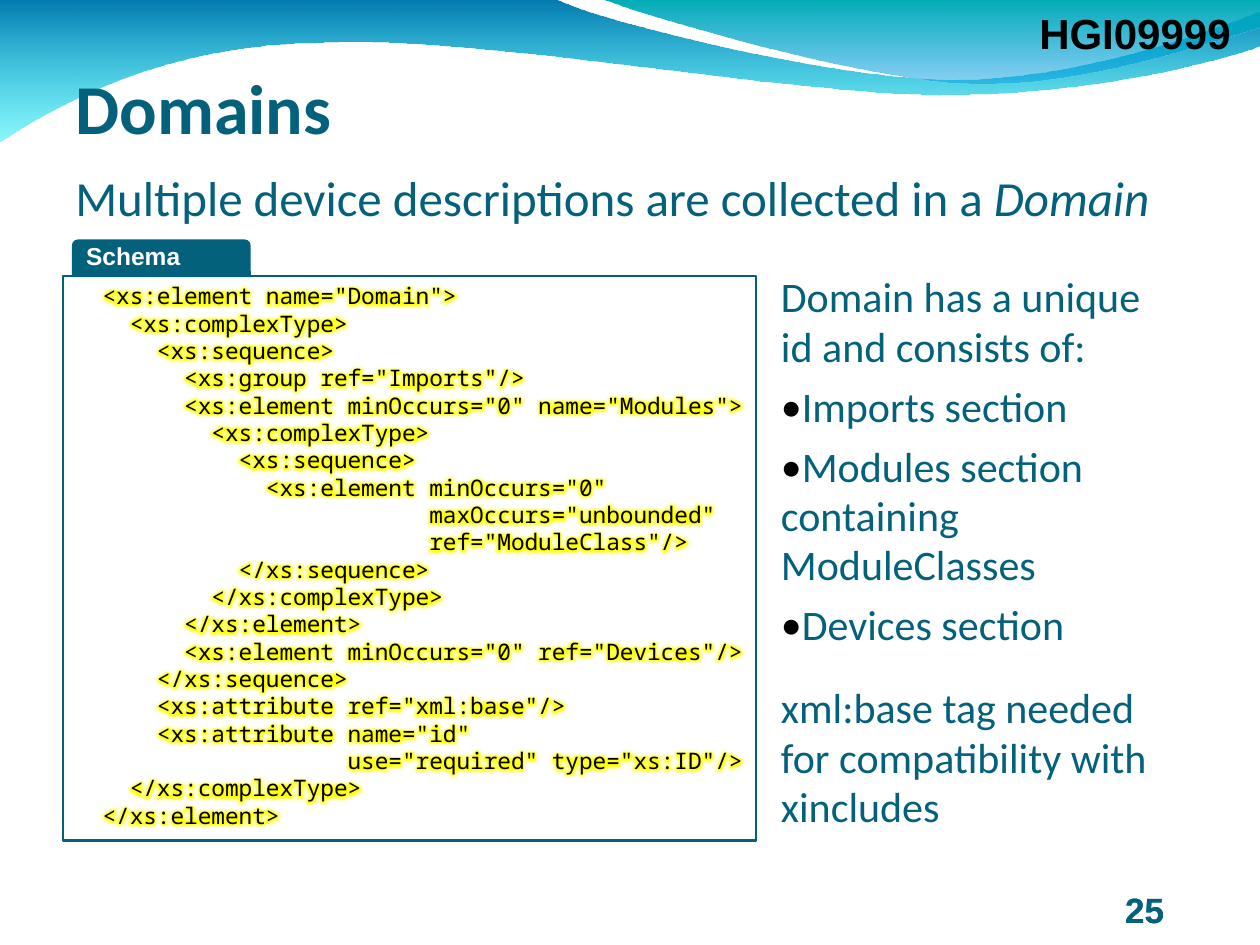
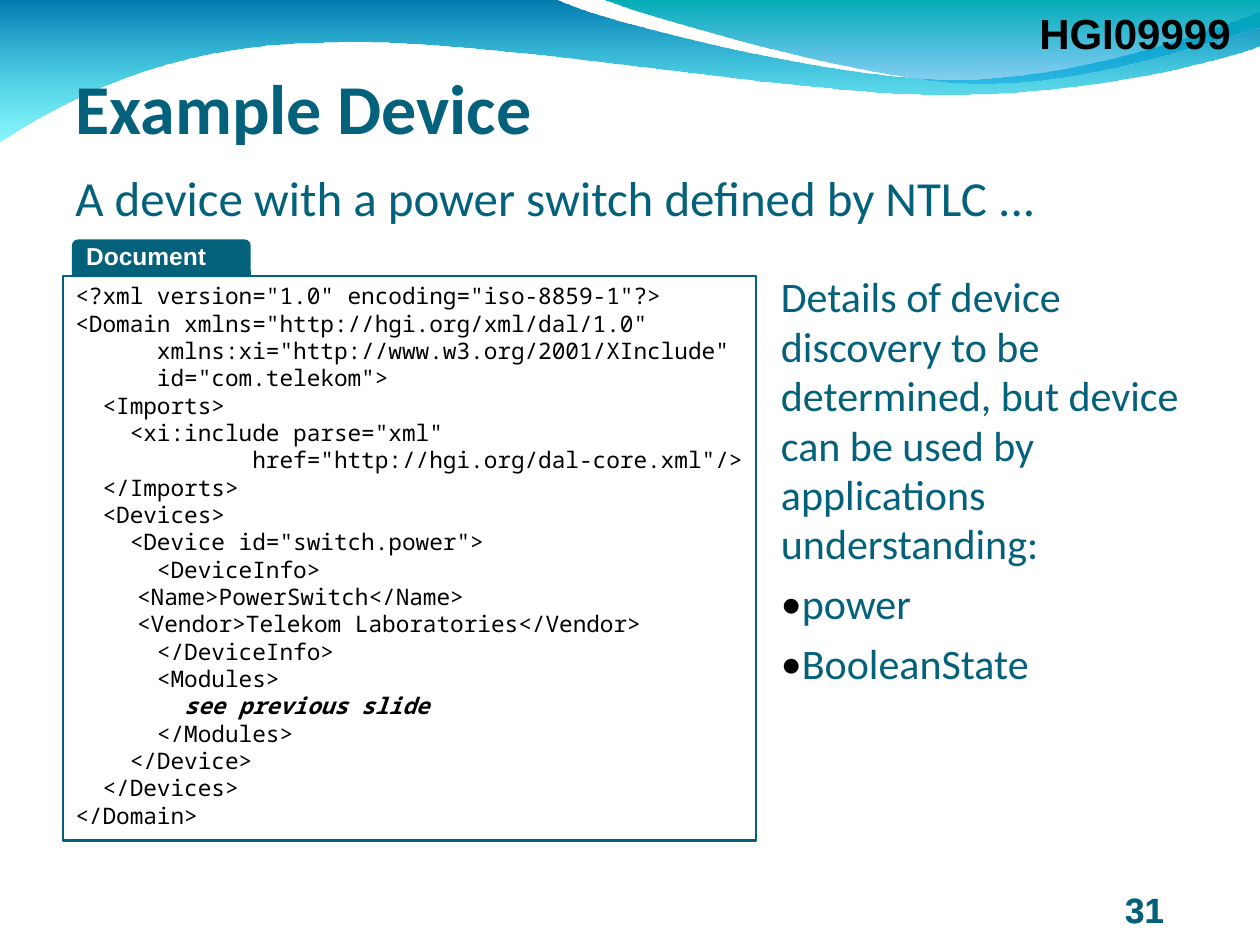
from lxml.etree import SubElement
from pptx import Presentation
from pptx.dml.color import RGBColor
from pptx.enum.shapes import MSO_SHAPE
from pptx.enum.text import MSO_ANCHOR, MSO_AUTO_SIZE, PP_ALIGN
from pptx.oxml import parse_xml
from pptx.oxml.ns import nsdecls, qn
from pptx.util import Pt

PX = 9144  # 100 px to the inch
TEAL, BLACK, WHITE, YELLOW = "04617B", "000000", "FFFFFF", "FFFF00"
BODY, LABEL, MONO = "Calibri", "Arial", "Noto Sans Mono"

# Wave bands: start point, then lines (one point) and curves (three points)
WAVES = [
    ((0, -1), [[(440, -1)], [(476, 17), (664, 63), (758, 63)],
               [(853, 63), (958, 26), (1000, 9)], [(1001, 36)],
               [(983, 44), (870, 76), (746, 75)],
               [(622, 75), (382, 28), (257, 34)],
               [(129, 35), (46, 83), (-1, 113)]], "0079AF", "00EBF8"),
    ((479, 0), [[(509, 12), (682, 63), (769, 66)],
                [(856, 70), (961, 33), (1000, 22)], [(1000, 0)]],
     "00ADB6", "009BE5"),
]

DOMAIN_SCHEMA = """\
  <xs:element name="Domain">
    <xs:complexType>
      <xs:sequence>
        <xs:group ref="Imports"/>
        <xs:element minOccurs="0" name="Modules">
          <xs:complexType>
            <xs:sequence>
              <xs:element minOccurs="0"
                          maxOccurs="unbounded"
                          ref="ModuleClass"/>
            </xs:sequence>
          </xs:complexType>
        </xs:element>
        <xs:element minOccurs="0" ref="Devices"/>
      </xs:sequence>
      <xs:attribute ref="xml:base"/>
      <xs:attribute name="id"
                    use="required" type="xs:ID"/>
    </xs:complexType>
  </xs:element>"""

DEVICE_DOCUMENT = """\
<?xml version="1.0" encoding="iso-8859-1"?>
<Domain xmlns="http://hgi.org/xml/dal/1.0"
      xmlns:xi="http://www.w3.org/2001/XInclude"
      id="com.telekom">
  <Imports>
    <xi:include parse="xml"
             href="http://hgi.org/dal-core.xml"/>
  </Imports>
  <Devices>
    <Device id="switch.power">
      <DeviceInfo>
\t<Name>PowerSwitch</Name>
\t<Vendor>Telekom Laboratories</Vendor>
      </DeviceInfo>
      <Modules>
        see previous slide
      </Modules>
    </Device>
  </Devices>
</Domain>"""


def rgb(value):
    return RGBColor.from_string(value)


def bend(sp, segments):
    """Turn the three lines that stand for each curve into one Bézier."""
    lines = iter(sp.element.xpath(".//a:lnTo"))
    for segment in segments:
        parts = [next(lines) for _ in segment]
        if len(parts) == 3:
            first, *rest = parts
            first.tag = qn("a:cubicBezTo")
            for line in rest:
                first.append(line[0])
                line.getparent().remove(line)


class Deck:
    def __init__(self):
        self.prs = Presentation()
        self.prs.slide_width, self.prs.slide_height = 1000 * PX, 750 * PX
        self.layout = self.prs.slide_layouts[5]
        self.s = None

    def new_slide(self, title):
        first = self.s is None
        self.s = self.prs.slides.add_slide(self.layout)
        if first:
            self.decorate_layout()
        sp = self.s.shapes.title
        sp.left, sp.top, sp.width, sp.height = [v * PX for v in (50, 30, 702, 95)]
        tf = self.frame(sp, (10, 5, 10, 5), MSO_ANCHOR.BOTTOM)
        tf.text = title
        self.style(tf, 40, BODY, TEAL, bold=True, spacing=0.98)

    def decorate_layout(self):
        """Draw the bands and the document number once, on the layout."""
        parts = [self.wave(*wave) for wave in WAVES]
        parts.append(self.text((815, 1, 174, 50), "HGI09999", 24, LABEL, BLACK,
                               bold=True, insets=(10, 5, 10, 5), wrap=False))
        for number, sp in enumerate(parts, 101):
            sp.element.xpath(".//p:cNvPr")[0].set("id", str(number))
            self.layout.shapes.element.append(sp.element)

    def wave(self, start, segments, top_color, bottom_color):
        builder = self.s.shapes.build_freeform(*start, scale=PX)
        builder.add_line_segments([pt for seg in segments for pt in seg], close=True)
        sp = builder.convert_to_shape()
        bend(sp, segments)
        sp.shadow.inherit = False
        sp.line.fill.background()
        sp.fill.gradient()
        sp.fill.gradient_angle = 270
        for stop, color in zip(sp.fill.gradient_stops, (top_color, bottom_color)):
            stop.color.rgb = rgb(color)
        bottom = sp.element.xpath(".//a:gs/a:srgbClr")[-1]
        SubElement(bottom, qn("a:alpha")).set("val", "45000")
        return sp

    def frame(self, sp, insets, anchor=MSO_ANCHOR.TOP, wrap=True):
        tf = sp.text_frame
        tf.auto_size = MSO_AUTO_SIZE.NONE
        tf.word_wrap = wrap
        tf.vertical_anchor = anchor
        (tf.margin_left, tf.margin_top,
         tf.margin_right, tf.margin_bottom) = [v * PX for v in insets]
        return tf

    def style(self, tf, size, font, color, bold=False, align=PP_ALIGN.LEFT,
              spacing=None, before=0):
        for i, p in enumerate(tf.paragraphs):
            p.alignment = align
            p.line_spacing = spacing
            p.space_before = Pt(before if i else 0)
            for r in p.runs:
                r.font.size, r.font.name, r.font.bold = Pt(size), font, bold
                r.font.color.rgb = rgb(color)

    def text(self, box, text, size, font, color, insets=(10, 1, 10, 5),
             anchor=MSO_ANCHOR.TOP, wrap=True, **style):
        sp = self.s.shapes.add_textbox(*[v * PX for v in box])
        tf = self.frame(sp, insets, anchor, wrap)
        tf.text = text
        self.style(tf, size, font, color, **style)
        return sp

    def shape(self, kind, box, text, insets, fill=None, line=None):
        sp = self.s.shapes.add_shape(kind, *[v * PX for v in box])
        sp.shadow.inherit = False
        if fill:
            sp.fill.solid()
            sp.fill.fore_color.rgb = rgb(fill)
        else:
            sp.fill.background()
        if line:
            sp.line.color.rgb = rgb(line)
            sp.line.width = Pt(1.5)
        else:
            sp.line.fill.background()
        tf = self.frame(sp, insets)
        tf.text = text
        return tf

    def lead(self, text, italic_end=""):
        sp = self.text((50, 134, 917, 52), text, 28, BODY, TEAL, spacing=0.98)
        if italic_end:
            tf = sp.text_frame
            r = tf.paragraphs[0].add_run()
            r.text = italic_end
            self.style(tf, 28, BODY, TEAL, spacing=0.98)
            r.font.italic = True

    def listing(self, label, code, emphasis=None, glow=False):
        """Code box with a label tab on its top edge."""
        tf = self.shape(MSO_SHAPE.RECTANGLE, (50, 219, 550, 448), code,
                        (10, 5, 0, 5), line=TEAL)
        for p in tf.paragraphs:
            if p.text.startswith("\t"):
                tabs = SubElement(p._p.get_or_add_pPr(), qn("a:tabLst"))
                tab = SubElement(tabs, qn("a:tab"))
                tab.set("pos", str(49 * PX))
                tab.set("algn", "l")
        self.style(tf, 13, MONO, BLACK)
        for r in (r for p in tf.paragraphs for r in p.runs):
            if r.text.strip() == emphasis:
                r.font.bold = r.font.italic = True
            if glow:
                r._r.rPr.find(qn("a:solidFill")).addnext(parse_xml(
                    f'<a:effectLst {nsdecls("a")}><a:glow rad="63500">'
                    f'<a:srgbClr val="{YELLOW}"/></a:glow></a:effectLst>'))
        tf = self.shape(MSO_SHAPE.ROUND_2_SAME_RECTANGLE, (57, 190, 142, 30),
                        label, (10, 0, 10, 5), fill=TEAL)
        self.style(tf, 14, LABEL, WHITE, bold=True)

    def side_notes(self, height, intro, bullets):
        sp = self.text((610, 216, 333, height), intro, 24, BODY, TEAL,
                       insets=(10, 1, 0, 5))
        tf = sp.text_frame
        for bullet in bullets:
            p = tf.add_paragraph()
            p.text = bullet
            pPr = p._p.get_or_add_pPr()
            pPr.set("marL", "0")
            pPr.set("indent", "0")
            color = SubElement(pPr, qn("a:buClr"))
            SubElement(color, qn("a:srgbClr")).set("val", BLACK)
            SubElement(pPr, qn("a:buFont")).set("typeface", BODY)
            SubElement(pPr, qn("a:buChar")).set("char", "•")
        # Line breaks inside a paragraph are written as vertical tabs
        self.style(tf, 24, BODY, TEAL, spacing=0.98, before=6)

    def page_number(self, number):
        # Two layers give the number its heavier weight
        for _ in range(2):
            self.text((862, 703, 87, 39), str(number), 20, LABEL, TEAL,
                      insets=(10, 7, 25, 5), anchor=MSO_ANCHOR.MIDDLE,
                      bold=True, align=PP_ALIGN.RIGHT, spacing=0.93)


def main():
    deck = Deck()

    # Domains
    deck.new_slide("Domains")
    deck.page_number(25)
    deck.listing("Schema", DOMAIN_SCHEMA, glow=True)
    deck.lead("Multiple device descriptions are collected in a ", "Domain")
    deck.side_notes(309, "Domain has a unique\vid and consists of:",
                    ["Imports section",
                     "Modules section\vcontaining\vModuleClasses",
                     "Devices section"])
    deck.text((610, 542, 333, 125),
              "xml:base tag needed for compatibility with xincludes",
              24, BODY, TEAL, spacing=0.98)

    # Example device
    deck.new_slide("Example Device")
    deck.page_number(31)
    deck.listing("Document", DEVICE_DOCUMENT, emphasis="see previous slide")
    deck.lead("A device with a power switch defined by NTLC ...")
    deck.side_notes(348, "Details of device discovery to be determined, but "
                    "device can be used by applications understanding:",
                    ["power", "BooleanState"])

    deck.prs.save("out.pptx")


if __name__ == "__main__":
    main()
